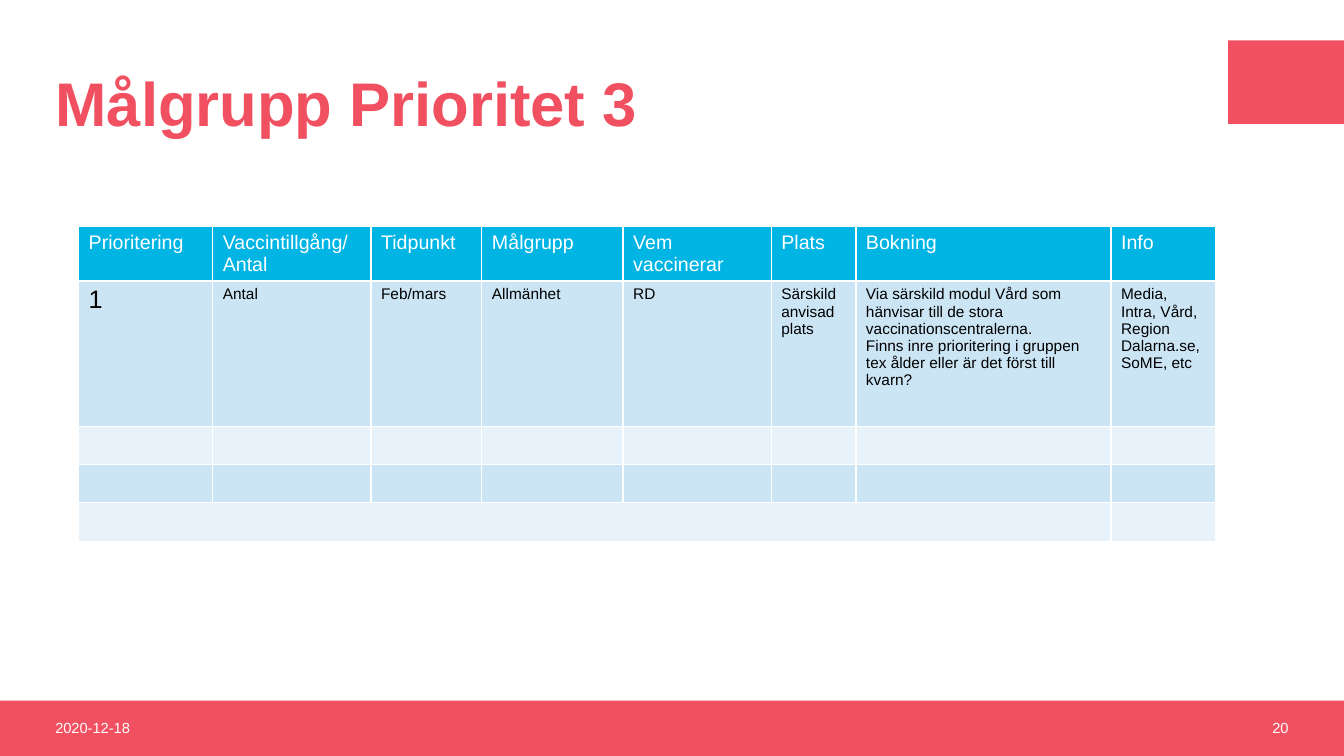
from dataclasses import dataclass

from lxml import etree
from pptx import Presentation
from pptx.dml.color import RGBColor
from pptx.enum.shapes import MSO_SHAPE
from pptx.enum.text import MSO_ANCHOR, MSO_AUTO_SIZE, PP_ALIGN
from pptx.oxml.ns import qn
from pptx.util import Inches, Pt

RECT = MSO_SHAPE.RECTANGLE
MIDDLE = MSO_ANCHOR.MIDDLE
FIXED = MSO_AUTO_SIZE.NONE
LEFT, RIGHT = PP_ALIGN.LEFT, PP_ALIGN.RIGHT
RED, WHITE, BLACK = "F15060", "FFFFFF", "000000"
BLUE, BANDS = "00B4E4", ("CCE5F5", "E7F2FA")


@dataclass
class Box:
    left: float
    top: float
    width: float
    height: float

    def place(self) -> list:
        return [Inches(v) for v in (self.left, self.top, self.width, self.height)]


@dataclass
class Label:
    text: str
    box: Box
    align: PP_ALIGN


@dataclass
class Column:
    head: str
    width: float
    text: str
    size: float = 11


BARS = [Box(0, 6.95, 13.33, 0.55), Box(12.18, 0.4, 1.15, 0.83)]
LABELS = [
    Label("2020-12-18", Box(0.45, 6.95, 3, 0.54), LEFT),
    Label("20", Box(9.88, 6.95, 3, 0.54), RIGHT),
]
COLUMNS = [
    Column("Prioritering", 1.33, "1", 18),
    Column("Vaccintillgång/\nAntal", 1.57, "Antal"),
    Column("Tidpunkt", 1.1, "Feb/mars"),
    Column("Målgrupp", 1.4, "Allmänhet"),
    Column("Vem vaccinerar", 1.47, "RD"),
    Column("Plats", 0.84, "Särskild anvisad plats"),
    Column("Bokning", 2.53,
           "Via särskild modul Vård som hänvisar till de stora vaccinationscentralerna.\n"
           "Finns inre prioritering i gruppen tex ålder eller är det först till kvarn?"),
    Column("Info", 1.04, "Media, Intra, Vård, Region Dalarna.se, SoME, etc"),
]
ROWS = [0.36, 1.44, 0.36, 0.36, 0.36]


def color(code: str) -> RGBColor:
    return RGBColor.from_string(code)


def write(frame, text: str, size: float, code: str, align=LEFT, bold=False) -> None:
    style = {"name": "Arial", "size": Pt(size), "bold": bold}
    frame.text = text
    for para in frame.paragraphs:
        para.alignment = align
        for key, value in style.items():
            setattr(para.font, key, value)
        para.font.color.rgb = color(code)


def center(frame) -> None:
    for key, value in {"word_wrap": True, "auto_size": FIXED,
                       "vertical_anchor": MIDDLE}.items():
        setattr(frame, key, value)


def add_bar(slide, box: Box) -> None:
    bar = slide.shapes.add_shape(RECT, *box.place())
    bar.shadow.inherit = False
    bar.fill.solid()
    bar.fill.fore_color.rgb = color(RED)
    bar.line.fill.background()


def add_label(slide, label: Label) -> None:
    frame = slide.shapes.add_textbox(*label.box.place()).text_frame
    center(frame)
    write(frame, label.text, 10.5, WHITE, label.align)


def add_title(slide, text: str, box: Box) -> None:
    title = slide.shapes.title
    for key, value in zip(("left", "top", "width", "height"), box.place()):
        setattr(title, key, value)
    center(title.text_frame)
    write(title.text_frame, text, 44, RED, bold=True)
    title.text_frame.paragraphs[0].line_spacing = 0.9


def paint(cell, code: str) -> None:
    props = cell._tc.get_or_add_tcPr()
    for side in "LRTB":
        line = etree.SubElement(props, qn(f"a:ln{side}"), w=str(Pt(1)))
        fill = etree.SubElement(line, qn("a:solidFill"))
        etree.SubElement(fill, qn("a:srgbClr"), val=WHITE)
    cell.fill.solid()
    cell.fill.fore_color.rgb = color(code)


def add_grid(slide, left: float, top: float) -> None:
    box = Box(left, top, sum(c.width for c in COLUMNS), sum(ROWS))
    grid = slide.shapes.add_table(len(ROWS), len(COLUMNS), *box.place()).table
    for row, height in zip(grid.rows, ROWS):
        row.height = Inches(height)
    for i, col in enumerate(COLUMNS):
        grid.columns[i].width = Inches(col.width)
        write(grid.cell(0, i).text_frame, col.head, 14, WHITE)
        write(grid.cell(1, i).text_frame, col.text, col.size, BLACK)
        paint(grid.cell(0, i), BLUE)
        for j in range(1, len(ROWS)):
            paint(grid.cell(j, i), BANDS[(j - 1) % 2])
            if j > 1:
                write(grid.cell(j, i).text_frame, "", 18, BLACK)
    # Last row: all but the final column joined
    end = len(ROWS) - 1
    grid.cell(end, 0).merge(grid.cell(end, len(COLUMNS) - 2))


def main() -> None:
    deck = Presentation()
    deck.slide_width, deck.slide_height = Inches(13.33), Inches(7.5)
    slide = deck.slides.add_slide(deck.slide_layouts[5])

    # Red bars
    for bar in BARS:
        add_bar(slide, bar)

    # Title, date and page number
    add_title(slide, "Målgrupp Prioritet 3", Box(0.45, 0.4, 11.61, 1.32))
    for label in LABELS:
        add_label(slide, label)

    # Priority table
    add_grid(slide, 0.78, 2.25)
    deck.save("out.pptx")


if __name__ == "__main__":
    main()
